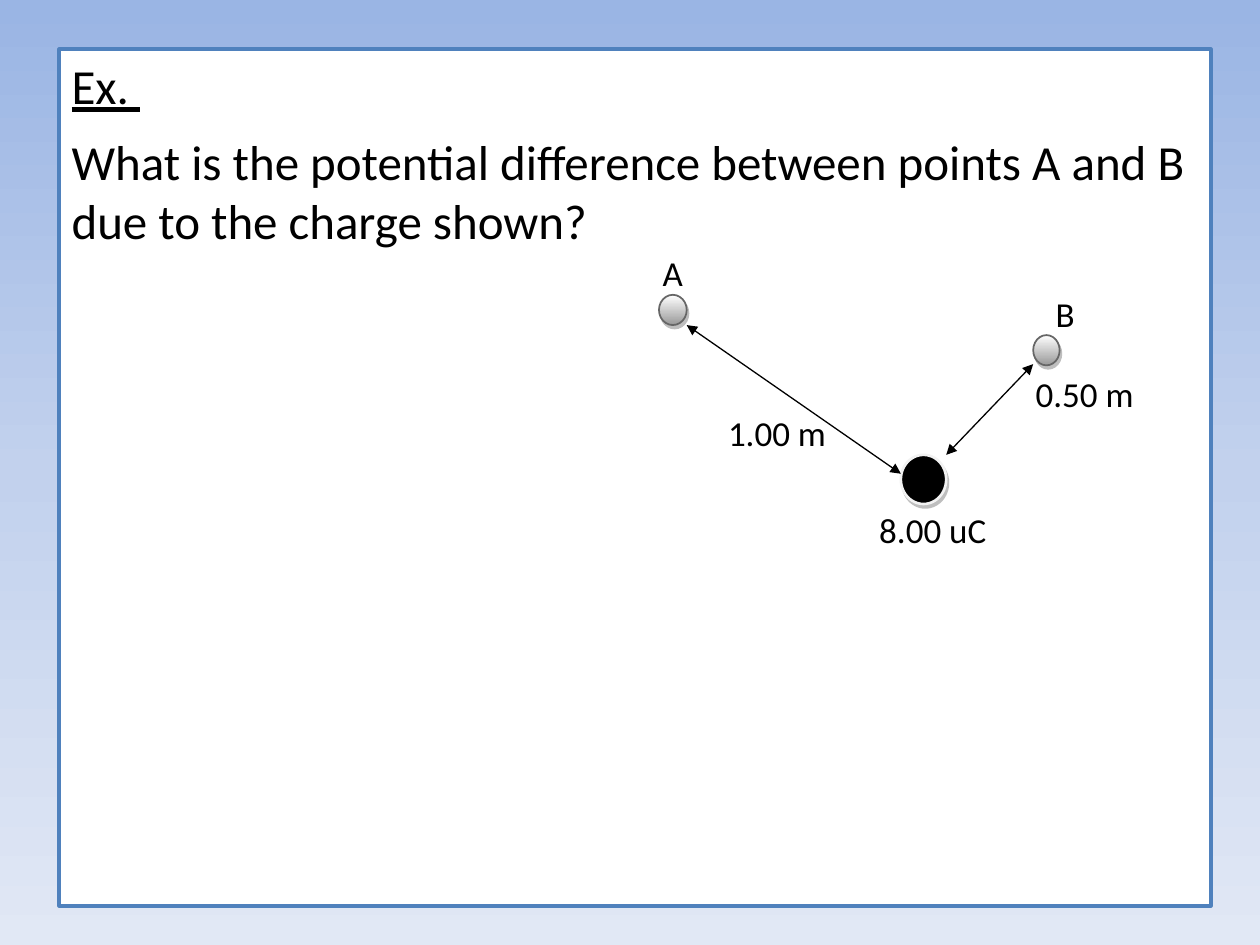
import copy

import pptx
import pptx.dml.color
import pptx.enum.shapes
import pptx.enum.text
import pptx.oxml
import pptx.oxml.ns
import pptx.util
from pptx.util import Inches

RGBColor = pptx.dml.color.RGBColor
BLACK = RGBColor(0x00, 0x00, 0x00)
WHITE = RGBColor(0xFF, 0xFF, 0xFF)
FRAME_BLUE = RGBColor(0x4F, 0x81, 0xBD)
POINT_GRAY = RGBColor(0x99, 0x99, 0x99)
POINT_EDGE = RGBColor(0x66, 0x66, 0x66)
CHARGE_EDGE = RGBColor(0xF2, 0xF2, 0xF2)
SKY = [RGBColor(0x9A, 0xB5, 0xE4), RGBColor(0xC2, 0xD1, 0xED), RGBColor(0xE1, 0xE8, 0xF5)]

qn = pptx.oxml.ns.qn
SHADOW_XML = (
    f'<a:outerShdw {pptx.oxml.ns.nsdecls("a")} blurRad="0" dist="27940" dir="3780000" rotWithShape="0">'
    '<a:srgbClr val="7F7F7F"><a:alpha val="50000"/></a:srgbClr></a:outerShdw>'
)


def write_text(shape, lines, size):
    """Fill a shape with left-aligned black paragraphs."""
    frame = shape.text_frame
    frame.word_wrap = True
    frame.vertical_anchor = pptx.enum.text.MSO_ANCHOR.TOP
    frame.text = "\n".join(lines)
    for paragraph in frame.paragraphs:
        paragraph.alignment = pptx.enum.text.PP_ALIGN.LEFT
        paragraph.space_after = pptx.util.Pt(10)
        font = paragraph.runs[0].font
        font.name = "Calibri"
        font.size = pptx.util.Pt(size)
        font.color.rgb = BLACK


def vertical_gradient(fill, top, bottom):
    """Apply a gradient running from top to bottom."""
    fill.gradient()
    fill.gradient_angle = 270
    for stop, color, position in zip(fill.gradient_stops, (top, bottom), (0, 1)):
        stop.color.rgb = color
        stop.position = position


presentation = pptx.Presentation()
presentation.slide_width = Inches(10)
presentation.slide_height = Inches(7.5)
slide = presentation.slides.add_slide(presentation.slide_layouts[6])

# Background: three-stop gradient
background_fill = slide.background.fill
vertical_gradient(background_fill, SKY[0], SKY[2])
stop_list = slide.element.find(".//" + qn("a:gsLst"))
stop_list.insert(1, copy.deepcopy(stop_list[0]))
middle_stop = background_fill.gradient_stops[1]
middle_stop.color.rgb = SKY[1]
middle_stop.position = 0.5

# Framed question
question = slide.shapes.add_shape(
    pptx.enum.shapes.MSO_SHAPE.RECTANGLE, Inches(0.47), Inches(0.39), Inches(9.14), Inches(6.8))
question.shadow.inherit = False
question.fill.solid()
question.fill.fore_color.rgb = WHITE
question.line.color.rgb = FRAME_BLUE
question.line.width = pptx.util.Pt(2)
write_text(question, [
    "Ex. ",
    "What is the potential difference between points A and B due to the charge shown?",
], 28)
question.text_frame.paragraphs[0].runs[0].font.underline = True

# Diagram: points A and B, then the charge
diagram = slide.shapes.add_group_shape().shapes
for left, top, width, height, is_charge in [
    (5.23, 2.34, 0.22, 0.24, False),
    (8.2, 2.66, 0.21, 0.24, False),
    (7.15, 3.61, 0.36, 0.39, True),
]:
    ball = diagram.add_shape(
        pptx.enum.shapes.MSO_SHAPE.OVAL, Inches(left), Inches(top), Inches(width), Inches(height))
    if is_charge:
        ball.fill.solid()
        ball.fill.fore_color.rgb = BLACK
    else:
        vertical_gradient(ball.fill, WHITE, POINT_GRAY)
    ball.line.color.rgb = CHARGE_EDGE if is_charge else POINT_EDGE
    ball.line.width = pptx.util.Pt(1.5 if is_charge else 1)
    ball.shadow.inherit = False
    effects = ball.element.spPr.find(qn("a:effectLst"))
    effects.append(pptx.oxml.parse_xml(SHADOW_XML))

# Double-headed distance arrows
for start_x, start_y, end_x, end_y in [(5.45, 2.58, 7.15, 3.76), (7.51, 3.61, 8.2, 2.89)]:
    arrow = diagram.add_connector(
        pptx.enum.shapes.MSO_CONNECTOR.STRAIGHT,
        Inches(start_x), Inches(start_y), Inches(end_x), Inches(end_y))
    arrow.line.color.rgb = BLACK
    arrow.line.width = pptx.util.Pt(0.75)
    line_xml = arrow.line._get_or_add_ln()
    for end in ("a:headEnd", "a:tailEnd"):
        line_xml.append(pptx.oxml.parse_xml(f'<{end} {pptx.oxml.ns.nsdecls("a")} type="triangle"/>'))
    arrow.element.spPr.append(pptx.oxml.parse_xml(f'<a:effectLst {pptx.oxml.ns.nsdecls("a")}/>'))

# Labels
for text, left, top, width in [
    ("A", 5.16, 1.95, 0.52),
    ("B", 8.28, 2.27, 0.63),
    ("8.00 uC", 6.88, 3.99, 1.14),
    ("1.00 m", 5.68, 3.22, 1.2),
    ("0.50 m", 8.12, 2.91, 1.18),
]:
    label = diagram.add_textbox(Inches(left), Inches(top), Inches(width), Inches(0.54))
    write_text(label, [text], 20)

presentation.save("out.pptx")
